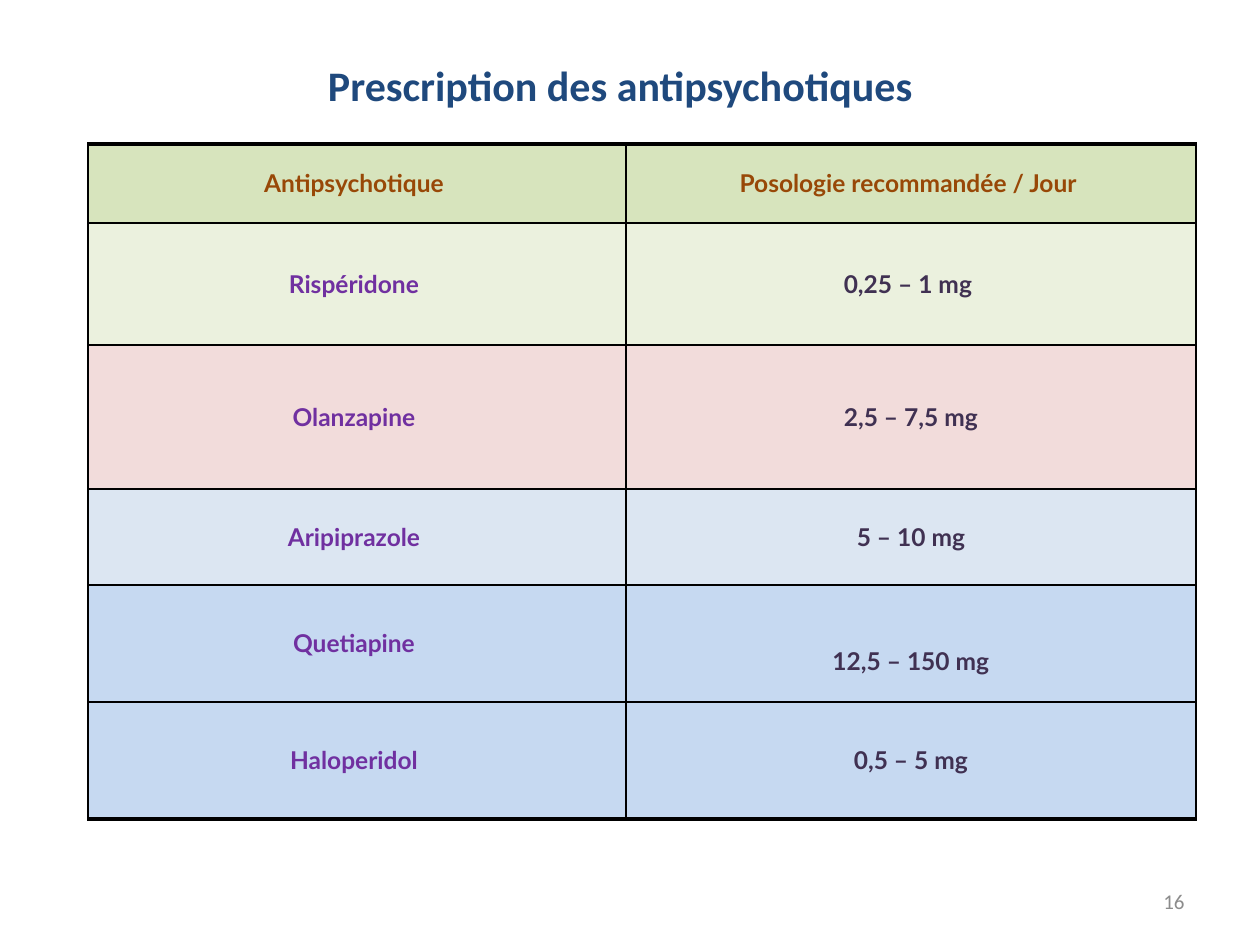
from lxml.etree import SubElement
from pptx import Presentation
from pptx.dml.color import RGBColor
from pptx.enum.text import MSO_ANCHOR as Anchor, PP_ALIGN as Align
from pptx.oxml.ns import qn
from pptx.util import Emu, Pt

EMU_PER_PX = 914400 / 126

NAVY = RGBColor(0x1F, 0x49, 0x7D)
BROWN = RGBColor(0x98, 0x48, 0x07)
PURPLE = RGBColor(0x70, 0x30, 0xA0)
PLUM = RGBColor(0x40, 0x31, 0x52)
GREY = RGBColor(0x8C, 0x8C, 0x8C)
BLACK = RGBColor(0, 0, 0)
GREEN = RGBColor(0xD7, 0xE4, 0xBD)
PALE_GREEN = RGBColor(0xEB, 0xF1, 0xDE)
PINK = RGBColor(0xF2, 0xDC, 0xDB)
PALE_BLUE = RGBColor(0xDC, 0xE6, 0xF2)
BLUE = RGBColor(0xC6, 0xD9, 0xF1)

COLUMN_WIDTHS = [538, 570]
# drug, dose, row height, fill, text colours
ROWS = [
    ("Antipsychotique ", "Posologie recommandée / Jour ", 79, GREEN, (BROWN, BROWN)),
    ("Rispéridone ", "0,25 – 1 mg ", 122, PALE_GREEN, (PURPLE, PLUM)),
    ("Olanzapine ", "2,5 – 7,5 mg", 144, PINK, (PURPLE, PLUM)),
    ("Aripiprazole ", "5 – 10 mg", 96, PALE_BLUE, (PURPLE, PLUM)),
    ("Quetiapine ", "12,5 – 150 mg", 117, BLUE, (PURPLE, PLUM)),
    ("Haloperidol ", "0,5 – 5 mg", 117, BLUE, (PURPLE, PLUM)),
]
LOWERED_CELL = (4, 1)


def px(n):
    return Emu(round(n * EMU_PER_PX))


def write(tf, text, font="Calibri", size=14, color=BLACK, bold=False,
          align=Align.CENTER, before=0):
    p = tf.paragraphs[0]
    p.alignment = align
    p.space_before = Pt(before)
    r = p.add_run()
    r.text = text
    r.font.name = font
    r.font.size = Pt(size)
    r.font.bold = bold
    r.font.color.rgb = color


def set_borders(cell, **widths):
    """Draw black cell borders; widths in points are keyed L, R, T and B."""
    tcPr = cell._tc.get_or_add_tcPr()
    for i, (side, width) in enumerate(widths.items()):
        ln = SubElement(tcPr, qn(f"a:ln{side}"), w=str(Pt(width)))
        fill = SubElement(ln, qn("a:solidFill"))
        SubElement(fill, qn("a:srgbClr"), val=str(BLACK))
        tcPr.insert(i, ln)


class SlideBuilder:
    def __init__(self, slide):
        self.slide = slide

    def title(self, text, x, y, w, h):
        sp = self.slide.shapes.title
        sp.left, sp.top, sp.width, sp.height = map(px, (x, y, w, h))
        sp.text_frame.vertical_anchor = Anchor.BOTTOM
        write(sp.text_frame, text, size=24, color=NAVY, bold=True)

    def label(self, text, x, y, w, h, **fmt):
        sp = self.slide.shapes.add_textbox(*map(px, (x, y, w, h)))
        tf = sp.text_frame
        tf.word_wrap = True
        tf.vertical_anchor = Anchor.MIDDLE
        write(tf, text, **fmt)

    def table(self, rows, widths, x, y):
        size = sum(widths), sum(row[2] for row in rows)
        frame = self.slide.shapes.add_table(
            len(rows), len(widths), *map(px, (x, y, *size)))
        table = frame.table
        table.first_row = table.horz_banding = False
        for column, width in zip(table.columns, widths):
            column.width = px(width)
        last = len(rows) - 1
        for i, (drug, dose, height, fill, colors) in enumerate(rows):
            table.rows[i].height = px(height)
            for j, (text, color) in enumerate(zip((drug, dose), colors)):
                cell = table.cell(i, j)
                self.cell(cell, text, fill, color,
                          top=41 if (i, j) == LOWERED_CELL else 6)
                set_borders(cell, L=1, R=1, T=2.25 if i == 0 else 1,
                            B=2.25 if i == last else 1)

    def cell(self, cell, text, fill, color, top):
        cell.fill.solid()
        cell.fill.fore_color.rgb = fill
        cell.vertical_anchor = Anchor.MIDDLE
        cell.margin_left = cell.margin_right = px(9)
        cell.margin_top, cell.margin_bottom = px(top), px(6)
        write(cell.text_frame, text, font="Lato", color=color, bold=True, before=2.8)


def main():
    prs = Presentation()
    prs.slide_width, prs.slide_height = px(1260), px(945)
    s = SlideBuilder(prs.slides.add_slide(prs.slide_layouts[5]))
    s.title("Prescription des antipsychotiques ", 247, 38, 756, 78)
    s.table(ROWS, COLUMN_WIDTHS, 88, 144)
    s.label("16", 903, 876, 294, 50, size=12, color=GREY, align=Align.RIGHT)
    prs.save("out.pptx")


if __name__ == "__main__":
    main()
